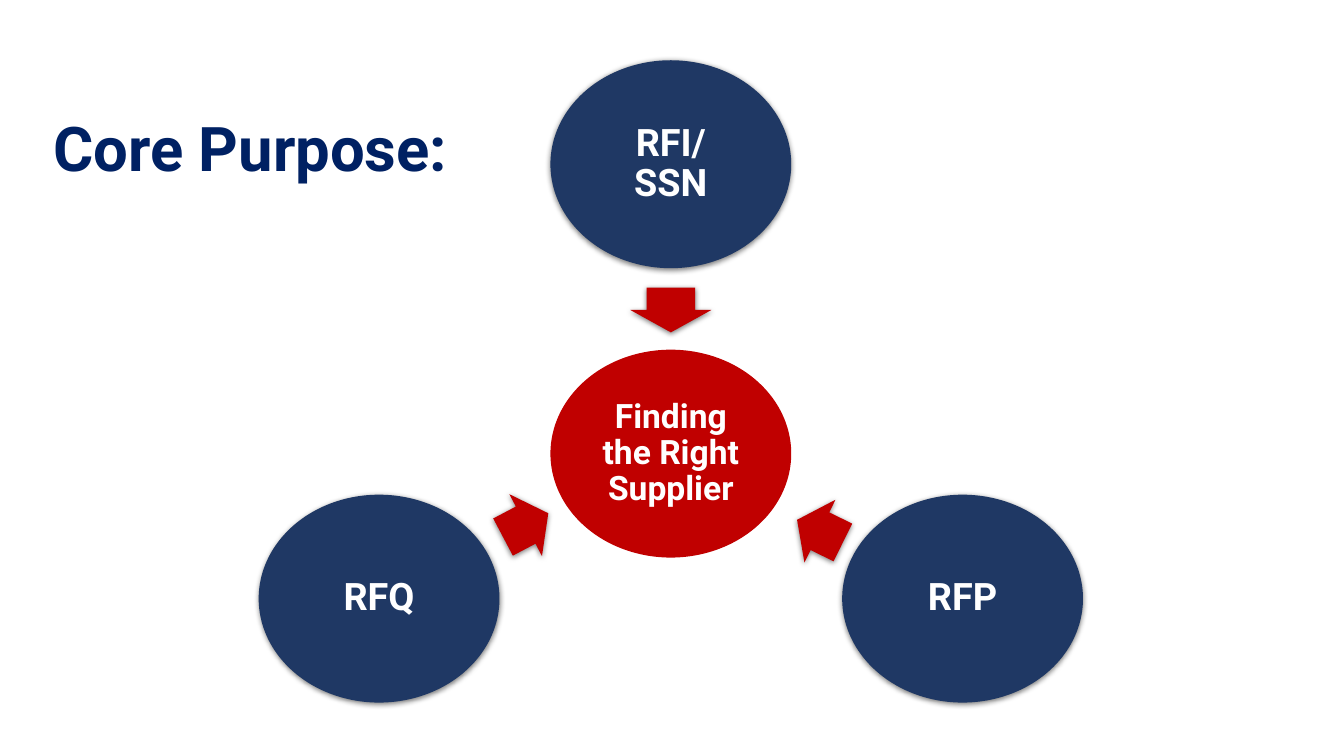
import pptx
import pptx.util
import pptx.dml.color
import pptx.enum.shapes
import pptx.enum.text
import pptx.oxml
import pptx.oxml.ns

Pt = pptx.util.Pt
SHAPE = pptx.enum.shapes.MSO_SHAPE
ANCHOR = pptx.enum.text.MSO_ANCHOR

TITLE_BLUE, NAVY, RED, WHITE = "002163", "1F3864", "C00000", "FFFFFF"
FONT = "Roboto"
CIRCLE_W, CIRCLE_H = 172, 148.5
HUB_X, HUB_Y = 479.2, 324
SIDE_DX, SIDE_DY, TOP_DY = 208.4, 103.6, 206.7


def rgb(value):
    return pptx.dml.color.RGBColor.from_string(value)


def add_text(sp, text, size, color, inset, spacing=1.0, anchor=ANCHOR.MIDDLE):
    """Fill a shape with bold centred text, one paragraph per line."""
    tf = sp.text_frame
    tf.word_wrap = True
    tf.vertical_anchor = anchor
    tf.margin_left = tf.margin_right = Pt(inset)
    tf.margin_top = tf.margin_bottom = Pt(inset)
    for i, line in enumerate(text.split("\n")):
        p = tf.add_paragraph() if i else tf.paragraphs[0]
        p.alignment = pptx.enum.text.PP_ALIGN.CENTER
        p.line_spacing = spacing
        r = p.add_run()
        r.text = line
        r.font.name = FONT
        r.font.size = Pt(size)
        r.font.bold = True
        r.font.color.rgb = rgb(color)


def add_shadow(sp):
    effects = sp._element.spPr.find(pptx.oxml.ns.qn("a:effectLst"))
    effects.append(pptx.oxml.parse_xml(
        f'<a:outerShdw {pptx.oxml.ns.nsdecls("a")} blurRad="{Pt(4)}" '
        f'dist="{Pt(1)}" dir="5400000" algn="ctr" rotWithShape="0">'
        '<a:srgbClr val="000000"><a:alpha val="49000"/></a:srgbClr>'
        '</a:outerShdw>'))


def add_centred_shape(slide, kind, cx, cy, w, h, fill, shadow=True):
    sp = slide.shapes.add_shape(
        kind, Pt(cx - w / 2), Pt(cy - h / 2), Pt(w), Pt(h))
    sp.fill.solid()
    sp.fill.fore_color.rgb = rgb(fill)
    sp.line.fill.background()
    sp.shadow.inherit = False
    if shadow:
        add_shadow(sp)
    return sp


def add_circle(slide, text, dx, dy, fill=NAVY, size=27, shadow=True):
    """Add a labelled circle, offset from the hub's centre."""
    sp = add_centred_shape(slide, SHAPE.OVAL, HUB_X + dx, HUB_Y + dy,
                           CIRCLE_W, CIRCLE_H, fill, shadow)
    add_text(sp, text, size, WHITE, inset=3, spacing=0.9)


def add_arrow(slide, cx, cy, w, h, angle):
    sp = add_centred_shape(slide, SHAPE.RIGHT_ARROW, cx, cy, w, h, RED)
    sp.adjustments[0] = 0.6
    sp.adjustments[1] = 0.5
    sp.rotation = angle


def add_title(slide, text):
    sp = slide.shapes.add_textbox(Pt(10), Pt(71), Pt(338), Pt(68))
    add_text(sp, text, 44, TITLE_BLUE, inset=7.2, anchor=ANCHOR.TOP)


def main():
    prs = pptx.Presentation()
    prs.slide_width, prs.slide_height = Pt(960), Pt(540)
    slide = prs.slides.add_slide(prs.slide_layouts[6])

    add_title(slide, "Core Purpose:")
    add_circle(slide, "Finding the Right Supplier", 0, 0,
               fill=RED, size=24, shadow=False)
    add_arrow(slide, HUB_X, 221.4, 32, 58, 90)
    add_circle(slide, "RFI/\nSSN", 0, -TOP_DY)
    add_arrow(slide, 585.7, 379.4, 36.5, 50, 206.3)
    add_circle(slide, "RFP", SIDE_DX, SIDE_DY)
    add_arrow(slide, 375.5, 375.1, 36.5, 50, 332.2)
    add_circle(slide, "RFQ", -SIDE_DX, SIDE_DY)

    prs.save("out.pptx")


if __name__ == "__main__":
    main()
